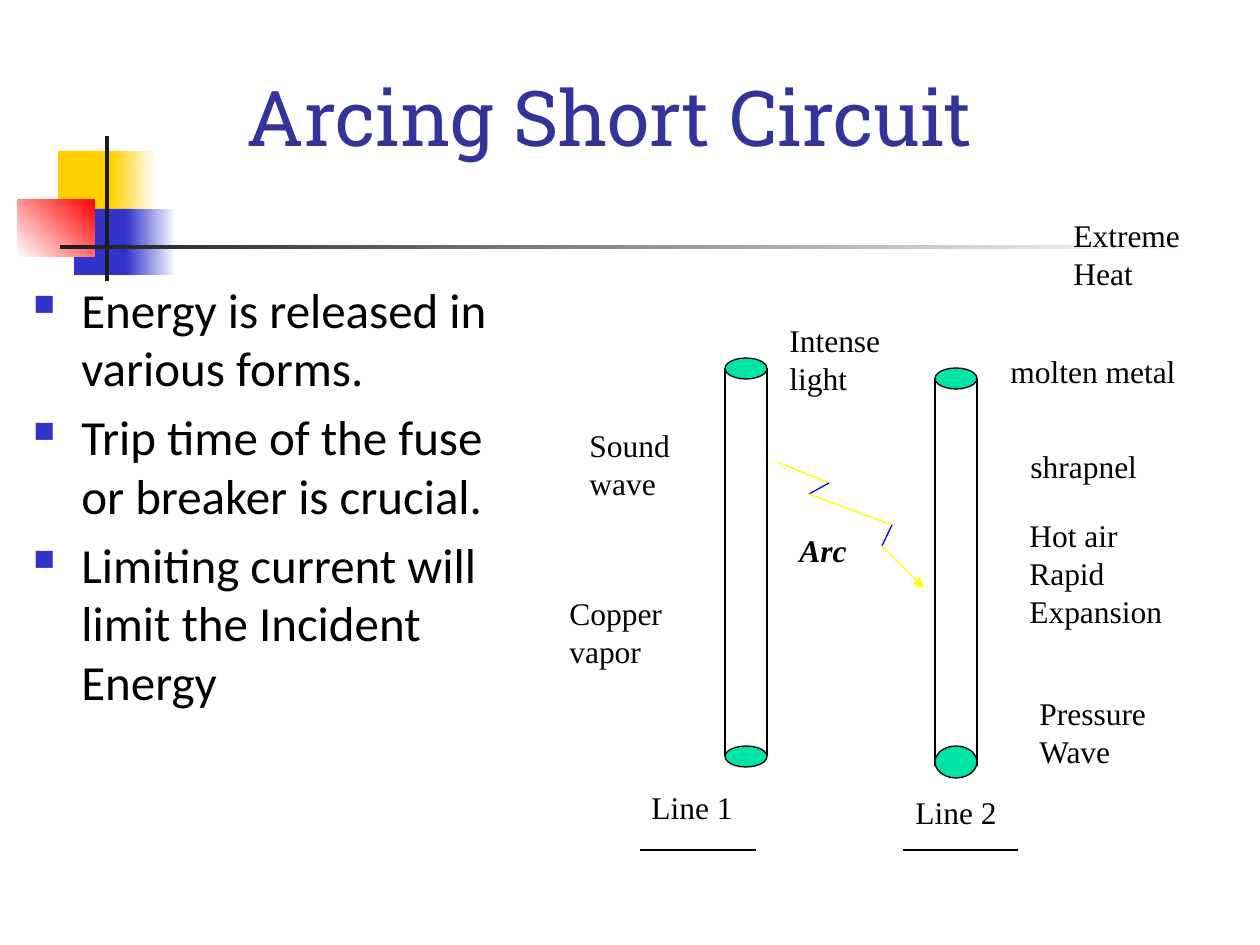
from itertools import pairwise

from lxml import etree
from pptx import Presentation
from pptx.dml.color import RGBColor
from pptx.enum.shapes import MSO_CONNECTOR, MSO_SHAPE
from pptx.enum.text import MSO_ANCHOR, PP_ALIGN
from pptx.oxml.ns import qn
from pptx.util import Pt

PX = 914400 // 126
STRAIGHT = MSO_CONNECTOR.STRAIGHT
RECT, OVAL = MSO_SHAPE.RECTANGLE, MSO_SHAPE.OVAL
TOP, BOTTOM = MSO_ANCHOR.TOP, MSO_ANCHOR.BOTTOM
LEFT, CENTER = PP_ALIGN.LEFT, PP_ALIGN.CENTER


class Theme:
    yellow, blue, red, ink = "FFCF01", "3333CC", "FF0000", "1C1C1C"
    white, black, title, copper = "FFFFFF", "000000", "333399", "00E4A8"
    arc, arc_turn = "FFFF00", "0000FF"
    title_font, body_font, label_font = "Roboto Slab", "Calibri", "Times New Roman"
    title_size, body_size, label_size = 44, 28, 18
    line_width = 0.75


TITLE = "Arcing Short Circuit"
POINTS = [
    "Energy is released in various forms.",
    "Trip time of the fuse or breaker is crucial.",
    "Limiting current will limit the Incident Energy",
]

# box, start colour, end colour (None for a plain fill), angle
ORNAMENT = [
    ((58, 151, 60, 66), Theme.yellow, None, 0),
    ((111, 151, 45, 66), Theme.yellow, Theme.white, 0),
    ((74, 209, 58, 66), Theme.blue, None, 0),
    ((126, 209, 50, 66), Theme.blue, Theme.white, 0),
    ((18, 199, 77, 58), Theme.white, Theme.red, 45),
    ((105, 136, 4, 145), Theme.ink, None, 0),
    ((60, 245, 1134, 4), Theme.ink, Theme.white, 0),
]

# left edge, top and bottom of the walls, heights of the two end caps
CONDUCTOR_WIDTH = 42
CONDUCTORS = [
    (725, 368, 756, (21, 21)),
    (935, 378, 766, (21, 32)),
]
CAP_BOTTOM_TOP = 746
ARC = [(777, 462), (829, 483), (809, 494), (892, 525), (882, 546), (924, 588)]

# lines of text, left, top, width
LABELS = [
    (["Line 1"], 639, 782, 134),
    (["Line 2"], 903, 787, 134),
    (["molten metal"], 998, 346, 246),
    (["Extreme", "Heat"], 1061, 210, 168),
    (["Hot air", "Rapid", "Expansion"], 1017, 510, 203),
    (["Pressure", "Wave"], 1027, 688, 178),
    (["Intense", "light"], 777, 315, 146),
    (["shrapnel"], 1018, 441, 168),
    (["Sound", "wave"], 577, 420, 144),
    (["Copper", "vapor"], 557, 588, 149),
]
LABEL_LINE, LABEL_PADDING = 38, 13
UNDERLINES = [(640, 756), (903, 1018)]
UNDERLINE_Y = 850


def rgb(code):
    return RGBColor.from_string(code)


def emu(lengths):
    return [length * PX for length in lengths]


def add_solid(slide, kind, box, color, end=None, angle=0, outline=None):
    solid = slide.shapes.add_shape(kind, *emu(box))
    solid.shadow.inherit = False
    if end:
        solid.fill.gradient()
        solid.fill.gradient_angle = angle
        for stop, code in zip(solid.fill.gradient_stops, (color, end)):
            stop.color.rgb = rgb(code)
    else:
        solid.fill.solid()
        solid.fill.fore_color.rgb = rgb(color)
    if outline:
        solid.line.color.rgb = rgb(outline)
        solid.line.width = Pt(Theme.line_width)
    else:
        solid.line.fill.background()


def add_line(slide, start, end, color=Theme.black, arrow=False):
    line = slide.shapes.add_connector(STRAIGHT, *emu((*start, *end)))
    line.line.color.rgb = rgb(color)
    line.line.width = Pt(Theme.line_width)
    properties = line._element.spPr
    if arrow:
        etree.SubElement(properties.find(qn("a:ln")), qn("a:tailEnd"), type="triangle")
    etree.SubElement(properties, qn("a:effectLst"))


def add_bullet(paragraph):
    properties = paragraph._p.get_or_add_pPr()
    indent = 48 * PX
    properties.set("marL", str(indent))
    properties.set("indent", str(-indent))
    color = etree.SubElement(properties, qn("a:buClr"))
    etree.SubElement(color, qn("a:srgbClr"), val=Theme.blue)
    etree.SubElement(properties, qn("a:buSzPct"), val="60000")
    etree.SubElement(properties, qn("a:buChar"), char="■")


def add_text(slide, lines, box, *, font=Theme.label_font, size=Theme.label_size,
             color=Theme.black, bold=False, italic=False, align=LEFT,
             anchor=TOP, bullets=False):
    frame = slide.shapes.add_textbox(*emu(box)).text_frame
    frame.word_wrap = True
    frame.vertical_anchor = anchor
    for index, line in enumerate(lines):
        paragraph = frame.add_paragraph() if index else frame.paragraphs[0]
        paragraph.alignment = align
        if bullets:
            paragraph.space_before = Pt(size * 0.2)
            add_bullet(paragraph)
        run = paragraph.add_run()
        run.text = line
        run.font.name, run.font.size = font, Pt(size)
        run.font.bold, run.font.italic = bold, italic
        run.font.color.rgb = rgb(color)


def add_conductor(slide, left, top, bottom, cap_heights):
    for x in (left, left + CONDUCTOR_WIDTH):
        add_line(slide, (x, top), (x, bottom))
    upper, lower = cap_heights
    for y, height in ((top - upper // 2, upper), (CAP_BOTTOM_TOP, lower)):
        add_solid(slide, OVAL, (left, y, CONDUCTOR_WIDTH, height),
                  Theme.copper, outline=Theme.black)


def add_arc(slide):
    """Draw the zigzag: long yellow strokes, short blue turns, arrow at the end."""
    strokes = list(pairwise(ARC))
    for index, (start, end) in enumerate(strokes):
        add_line(slide, start, end, Theme.arc_turn if index % 2 else Theme.arc,
                 arrow=index == len(strokes) - 1)


def main():
    deck = Presentation()
    deck.slide_width, deck.slide_height = emu((1260, 945))
    slide = deck.slides.add_slide(deck.slide_layouts[6])

    for box, color, end, angle in ORNAMENT:
        add_solid(slide, RECT, box, color, end, angle)
    add_text(slide, [TITLE], (73, 63, 1074, 105), font=Theme.title_font,
             size=Theme.title_size, color=Theme.title, align=CENTER, anchor=BOTTOM)
    add_text(slide, POINTS, (21, 273, 504, 567), font=Theme.body_font,
             size=Theme.body_size, bullets=True)

    for conductor in CONDUCTORS:
        add_conductor(slide, *conductor)
    add_arc(slide)
    add_text(slide, ["Arc"], (787, 525, 95, 51), bold=True, italic=True)
    for lines, left, top, width in LABELS:
        height = LABEL_LINE * len(lines) + LABEL_PADDING
        add_text(slide, lines, (left, top, width, height))
    for start, end in UNDERLINES:
        add_line(slide, (start, UNDERLINE_Y), (end, UNDERLINE_Y))

    deck.save("out.pptx")


if __name__ == "__main__":
    main()
